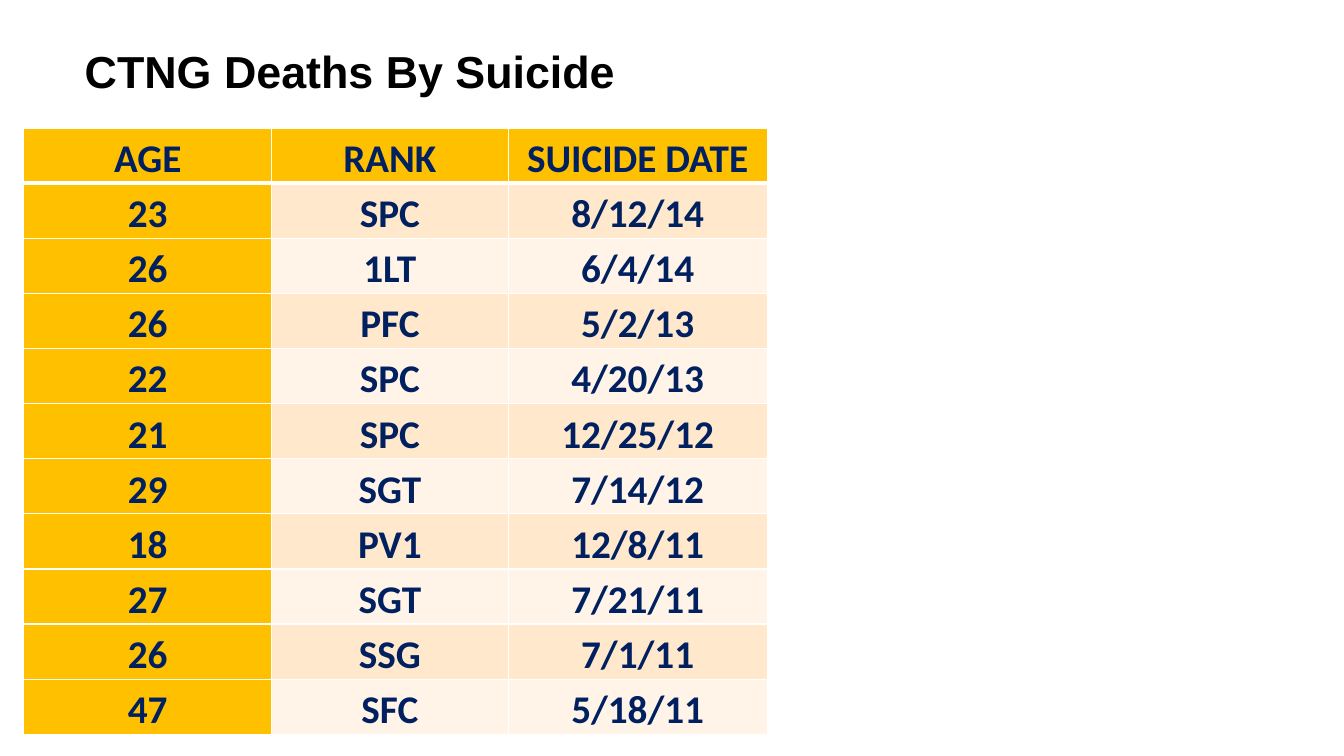
from lxml.etree import SubElement
from pptx import Presentation
from pptx.dml.color import RGBColor
from pptx.enum.text import MSO_ANCHOR, MSO_AUTO_SIZE, PP_ALIGN
from pptx.oxml.ns import qn
from pptx.util import Pt

COLORS = {
    "title": "000000",
    "text": "002060",
    "gold": "FFC000",
    "odd_row": "FFE8CC",
    "even_row": "FFF4E7",
    "border": "FFFFFF",
}
HEADINGS = ("AGE", "RANK", "SUICIDE DATE")
DEATHS = [
    ("23", "SPC", "8/12/14"),
    ("26", "1LT", "6/4/14"),
    ("26", "PFC", "5/2/13"),
    ("22", "SPC", "4/20/13"),
    ("21", "SPC", "12/25/12"),
    ("29", "SGT", "7/14/12"),
    ("18", "PV1", "12/8/11"),
    ("27", "SGT", "7/21/11"),
    ("26", "SSG", "7/1/11"),
    ("47", "SFC", "5/18/11"),
]
COLUMN_WIDTHS = (177, 169, 185)
ROW_HEIGHT = 38.6


def add_run(paragraph, text, font_name, size, color):
    run = paragraph.add_run()
    run.text = text
    run.font.name = font_name
    run.font.size = Pt(size)
    run.font.bold = True
    run.font.color.rgb = RGBColor.from_string(COLORS[color])


def set_title(slide, text):
    title = slide.shapes.title
    title.left, title.top, title.width, title.height = Pt(53.3), Pt(25.2), Pt(494.6), Pt(85)
    frame = title.text_frame
    frame.word_wrap = True
    frame.auto_size = MSO_AUTO_SIZE.NONE
    frame.vertical_anchor = MSO_ANCHOR.TOP
    frame.margin_top = Pt(5.7)
    paragraph = frame.paragraphs[0]
    paragraph.alignment = PP_ALIGN.LEFT
    add_run(paragraph, text, "Arial", 32, "title")


def set_borders(cell, bottom_width):
    properties = cell._tc.get_or_add_tcPr()
    for side, width in (("lnL", 1), ("lnR", 1), ("lnT", 1), ("lnB", bottom_width)):
        line = SubElement(properties, qn(f"a:{side}"), w=str(Pt(width)))
        fill = SubElement(line, qn("a:solidFill"))
        SubElement(fill, qn("a:srgbClr"), val=COLORS["border"])


def fill_cell(cell, text, color, bottom_width):
    set_borders(cell, bottom_width)
    cell.fill.solid()
    cell.fill.fore_color.rgb = RGBColor.from_string(COLORS[color])
    cell.margin_left = cell.margin_right = Pt(5)
    cell.margin_top = cell.margin_bottom = 0
    paragraph = cell.text_frame.paragraphs[0]
    paragraph.alignment = PP_ALIGN.CENTER
    paragraph.line_spacing = 1.15
    add_run(paragraph, text, "Calibri", 28, "text")


def cell_color(row, column):
    """Gold for the heading row and the age column, bands elsewhere."""
    if row == 0 or column == 0:
        return "gold"
    return "odd_row" if row % 2 else "even_row"


def add_deaths_table(slide):
    rows = [HEADINGS, *DEATHS]
    table = slide.shapes.add_table(
        len(rows), len(HEADINGS), Pt(17), Pt(91.4),
        Pt(sum(COLUMN_WIDTHS)), Pt(ROW_HEIGHT * len(rows)),
    ).table
    for column, width in zip(table.columns, COLUMN_WIDTHS):
        column.width = Pt(width)
    for r, values in enumerate(rows):
        table.rows[r].height = Pt(ROW_HEIGHT)
        for c, value in enumerate(values):
            fill_cell(table.cell(r, c), value, cell_color(r, c), 1 if r else 3)


def main():
    deck = Presentation()
    deck.slide_width, deck.slide_height = Pt(960), Pt(540)
    slide = deck.slides.add_slide(deck.slide_layouts[5])
    set_title(slide, "CTNG Deaths By Suicide")
    add_deaths_table(slide)
    deck.save("out.pptx")


if __name__ == "__main__":
    main()
